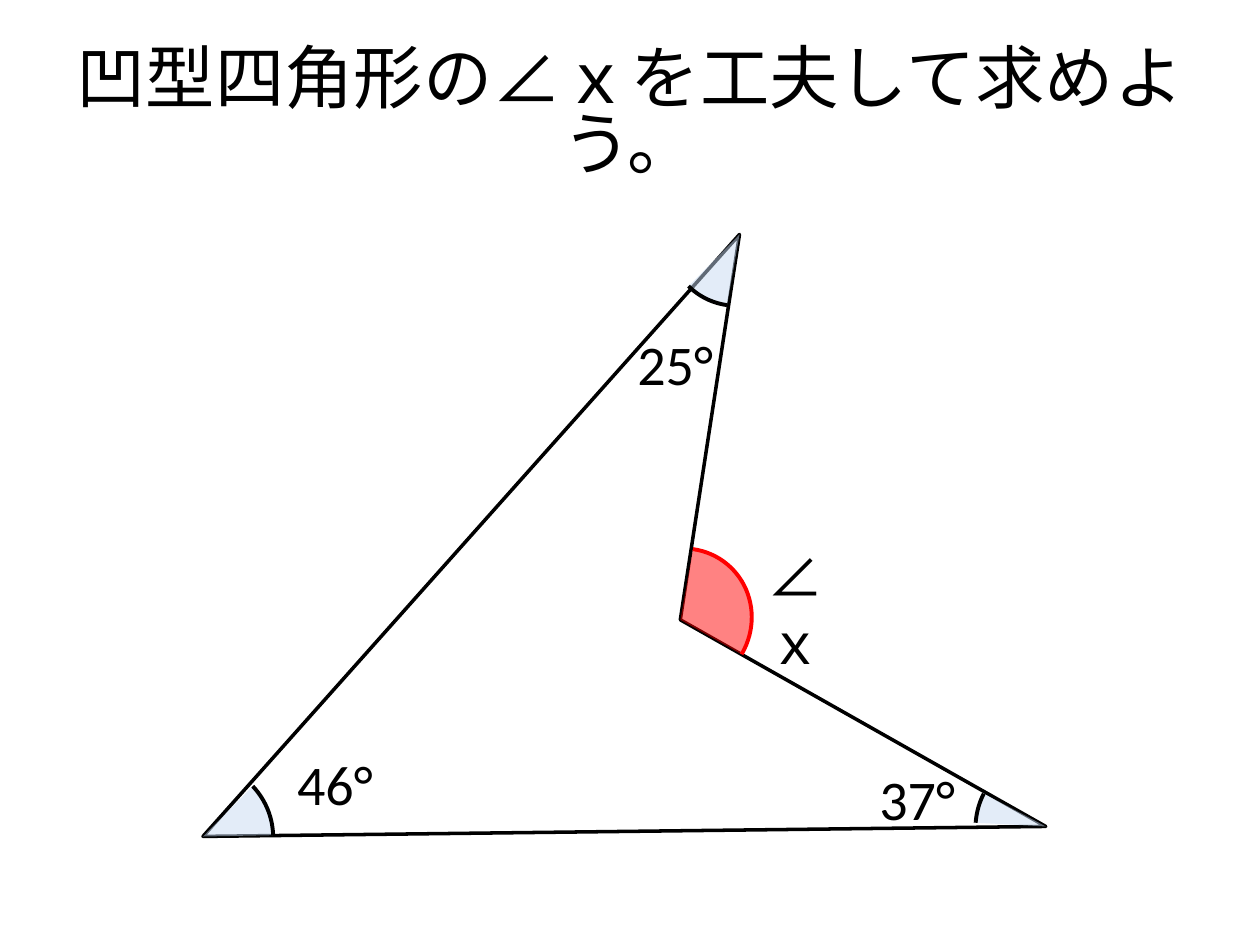
"""Build a slide that asks for an angle of a concave quadrilateral."""
import lxml.etree
import pptx
import pptx.dml.color
import pptx.enum.shapes
import pptx.enum.text
import pptx.oxml.ns
import pptx.util

Pt = pptx.util.Pt
COLORS = {"ink": "000000", "known": "C6D9F1", "unknown": "FF0000"}
FONT = "Calibri"
CORNERS = [(422.6, 134), (116, 478), (597.6, 472.3), (388.8, 354.2)]


def rgb(name):
    return pptx.dml.color.RGBColor.from_string(COLORS[name])


def add_text(page, text, left, top, width, height, size):
    box = page.shapes.add_textbox(Pt(left), Pt(top), Pt(width), Pt(height))
    frame = box.text_frame
    frame.word_wrap = True
    paragraph = frame.paragraphs[0]
    paragraph.text = text
    paragraph.font.name = FONT
    paragraph.font.size = Pt(size)
    paragraph.font.color.rgb = rgb("ink")
    return frame


def add_title(page, text):
    frame = add_text(page, text, 36, 21.6, 648, 90, 39.6)
    frame.margin_left = frame.margin_right = Pt(3)
    frame.vertical_anchor = pptx.enum.text.MSO_ANCHOR.MIDDLE
    paragraph = frame.paragraphs[0]
    paragraph.alignment = pptx.enum.text.PP_ALIGN.CENTER
    paragraph.line_spacing = 0.8


def add_outline(page, corners):
    points = [(Pt(x), Pt(y)) for x, y in corners]
    builder = page.shapes.build_freeform(*points[0], scale=1.0)
    builder.add_line_segments(points[1:], close=True)
    outline = builder.convert_to_shape()
    outline.shadow.inherit = False
    outline.fill.background()
    outline.line.color.rgb = rgb("ink")
    outline.line.width = Pt(2)


def add_angle(page, center, width, height, rotation, start, end, fill, line):
    x, y = center
    arc = page.shapes.add_shape(
        pptx.enum.shapes.MSO_SHAPE.ARC,
        Pt(x - width / 2), Pt(y - height / 2), Pt(width), Pt(height))
    arc.shadow.inherit = False
    arc.rotation = rotation
    for index, degrees in enumerate((start, end)):
        arc.adjustments[index] = degrees * 0.6
    arc.fill.solid()
    arc.fill.fore_color.rgb = rgb(fill)
    qn = pptx.oxml.ns.qn
    color = arc.fill._xPr.find(qn("a:solidFill")).find(qn("a:srgbClr"))
    lxml.etree.SubElement(color, qn("a:alpha"), val="49000")
    arc.line.color.rgb = rgb(line)
    arc.line.width = Pt(2.25)


def main():
    deck = pptx.Presentation()
    deck.slide_width, deck.slide_height = Pt(720), Pt(540)
    page = deck.slides.add_slide(deck.slide_layouts[6])
    add_title(page, "凹型四角形の∠ｘを工夫して求めよう。")
    add_outline(page, CORNERS)
    top, left, right, inner = CORNERS
    for angle in [
        (left, 80, 83, 167.8, 146.8, 191.08, "known", "ink"),
        (top, 83, 80, 313.2, 146.8, 181.4, "known", "ink"),
        (right, 80, 83, 16.8, 166.2, 191.08, "known", "ink"),
        (inner, 83, 80, 133.2, 146.8, 256.2, "unknown", "unknown"),
    ]:
        add_angle(page, *angle)
    for text, x, y, width in [
        ("∠ｘ", 431.3, 306, 63.4),
        ("46°", 162.7, 424.8, 80),
        ("37°", 495.4, 433.4, 80),
        ("25°", 357.1, 185, 80),
    ]:
        add_text(page, text, x, y, width, 46, 32)
    deck.save("out.pptx")


if __name__ == "__main__":
    main()
